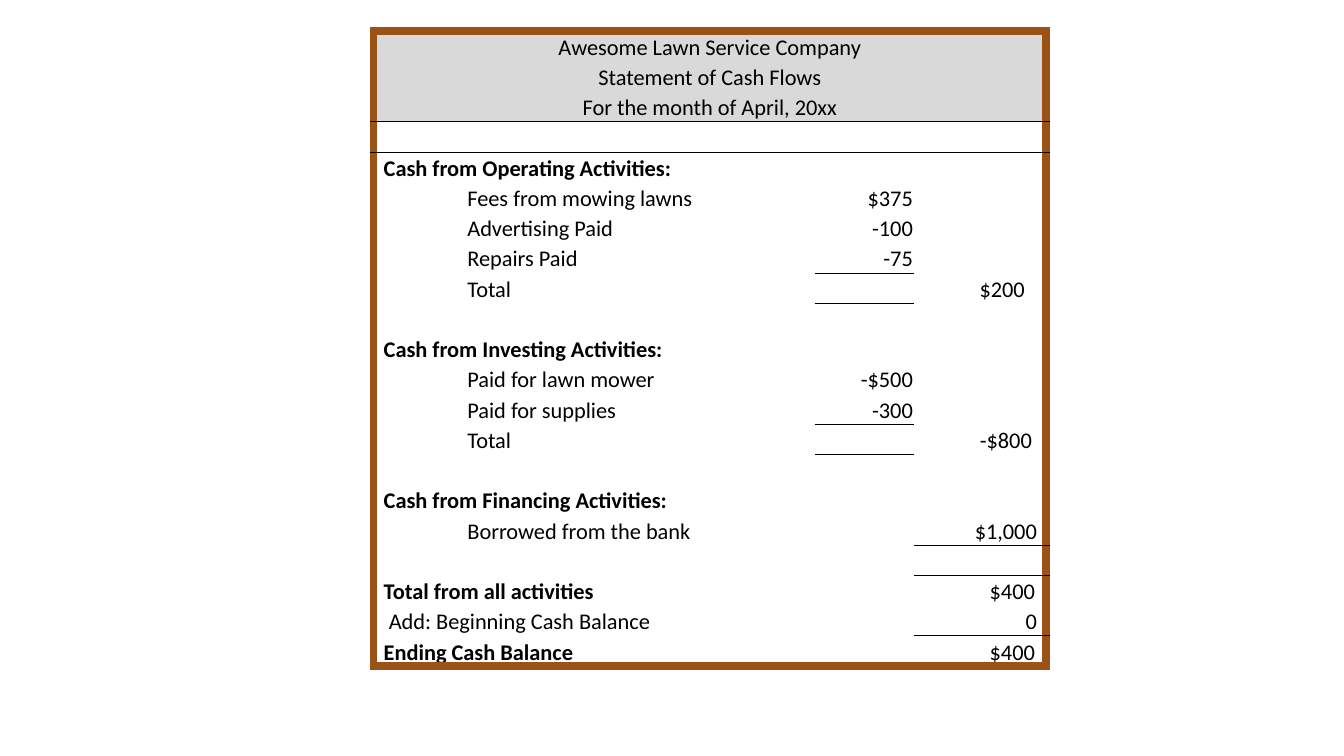
from lxml import etree
from pptx import Presentation
from pptx.dml.color import RGBColor as RGB
from pptx.enum.text import MSO_ANCHOR as ANCHOR, PP_ALIGN as ALIGN
from pptx.oxml.ns import qn
from pptx.util import Inches, Pt

COLORS = {"frame": "9A5315", "header": "D9D9D9", "text": "000000"}
FRAME = ("frame", 6)
RULE = ("text", 0.5)
NO_STYLE = "{2D5ABB26-0587-4C30-8999-92F81FD0307C}"
COL_SHARES = [0.069, 0.1905, 0.069, 0.0735, 0.0983]
NAME, ITEM, AMOUNT, SUM = 0, 1, 3, 4
HEADER_ROWS = 3

ROWS = [
    {NAME: "Awesome Lawn Service Company"},
    {NAME: "Statement of Cash Flows"},
    {NAME: "For the month of April, 20xx"},
    {},
    {NAME: "Cash from Operating Activities:"},
    {ITEM: "Fees from mowing lawns", AMOUNT: "$375"},
    {ITEM: "Advertising Paid", AMOUNT: "-100"},
    {ITEM: "Repairs Paid", AMOUNT: "-75"},
    {ITEM: "Total", SUM: "$200"},
    {},
    {NAME: "Cash from Investing Activities:"},
    {ITEM: "Paid for lawn mower", AMOUNT: "-$500"},
    {ITEM: "Paid for supplies", AMOUNT: "-300"},
    {ITEM: "Total", SUM: "-$800"},
    {},
    {NAME: "Cash from Financing Activities:"},
    {ITEM: "Borrowed from the bank", SUM: "$1,000"},
    {},
    {NAME: "Total from all activities", SUM: "$400"},
    {NAME: "Add: Beginning Cash Balance", SUM: "0"},
    {NAME: "Ending Cash Balance", SUM: "$400"},
]
RULED = {(2, c) for c in range(len(COL_SHARES))} | {(7, AMOUNT), (12, AMOUNT), (16, SUM), (19, SUM)}
SUM_INSETS = {"$200": 0.21, "-$800": 0.14, "$1,000": 0.09, "$400": 0.11, "0": 0.09}


def add_border(cell, side, color, width):
    ln = etree.SubElement(cell._tc.get_or_add_tcPr(), qn("a:ln" + side), w=str(Pt(width)))
    fill = etree.SubElement(ln, qn("a:solidFill"))
    etree.SubElement(fill, qn("a:srgbClr"), val=COLORS[color])


prs = Presentation()
prs.slide_width, prs.slide_height = Inches(13.33), Inches(7.5)
W, H = prs.slide_width, prs.slide_height
s = prs.slides.add_slide(prs.slide_layouts[6])

row_height = H // 25
last_row, last_col = len(ROWS) - 1, len(COL_SHARES) - 1
frame = s.shapes.add_table(len(ROWS), len(COL_SHARES), int(W * 0.278), int(H * 0.041),
                           W // 2, row_height * len(ROWS))
tbl = frame.table
tbl.first_row = tbl.horz_banding = False
tbl._tbl.tblPr.find(qn("a:tableStyleId")).text = NO_STYLE
for col, share in zip(tbl.columns, COL_SHARES):
    col.width = int(W * share)

for r, texts in enumerate(ROWS):
    tbl.rows[r].height = row_height
    header = r < HEADER_ROWS
    span_end = last_col if header else ITEM if NAME in texts else NAME
    if span_end:
        tbl.cell(r, NAME).merge(tbl.cell(r, span_end))

    for c in range(len(COL_SHARES)):
        cell = tbl.cell(r, c)
        text = texts.get(c, "")
        right_edge = span_end if c == NAME else c
        borders = {
            "L": FRAME if c == 0 else None,
            "R": FRAME if right_edge == last_col else None,
            "T": FRAME if r == 0 else RULE if (r - 1, c) in RULED else None,
            "B": FRAME if r == last_row else RULE if (r, c) in RULED else None,
        }
        for side, line in borders.items():
            if line:
                add_border(cell, side, *line)
        if header:
            cell.fill.solid()
            cell.fill.fore_color.rgb = RGB.from_string(COLORS["header"])
        else:
            cell.fill.background()

        left = 0.01
        if c == NAME and not header:
            left = 0.15 if text.startswith("Add") else 0.1
        right = SUM_INSETS.get(text, 0.01) if c == SUM else 0.01
        layout = {"margin_left": Inches(left), "margin_right": Inches(right),
                  "margin_top": Inches(0.01), "margin_bottom": 0,
                  "vertical_anchor": ANCHOR.BOTTOM}
        for key, value in layout.items():
            setattr(cell, key, value)

        p = cell.text_frame.paragraphs[0]
        p.alignment = ALIGN.CENTER if header else ALIGN.RIGHT if c >= AMOUNT else ALIGN.LEFT
        if text:
            run = p.add_run()
            run.text = text
            bold = c == NAME and not header and not text.startswith("Add")
            for key, value in {"name": "Calibri", "size": Pt(16), "bold": bold}.items():
                setattr(run.font, key, value)
            run.font.color.rgb = RGB.from_string(COLORS["text"])
        else:
            etree.SubElement(p._p, qn("a:endParaRPr"), sz="1600")

prs.save("out.pptx")
